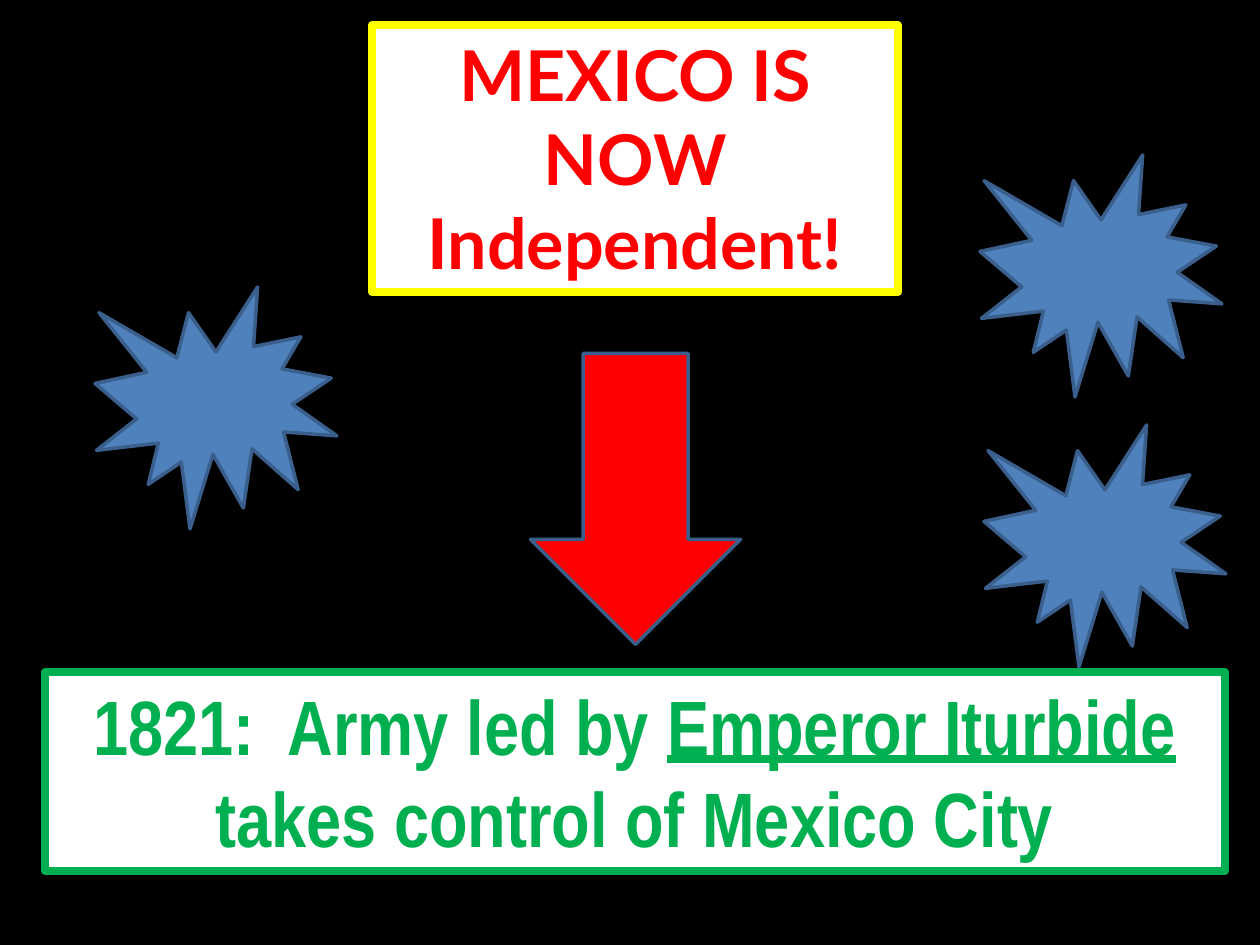
from pptx import Presentation
from pptx.dml.color import RGBColor
from pptx.enum.shapes import MSO_SHAPE
from pptx.enum.text import MSO_AUTO_SIZE, PP_ALIGN
from pptx.util import Emu, Pt

EMU_PER_PX = 914400 / 126
COLORS = {
    "background": "000000",
    "panel": "FFFFFF",
    "title_border": "FFFF00",
    "red": "FF0000",
    "green": "00B050",
    "burst": "4F81BD",
    "outline": "3A5F8C",
}
BURST_SIZE = 242
BURST_POSITIONS = [(980, 155), (95, 287), (984, 425)]


def px(length):
    return Emu(round(length * EMU_PER_PX))


def color(name):
    return RGBColor.from_string(COLORS[name])


def paint(shape, fill, line, line_width):
    shape.fill.solid()
    shape.fill.fore_color.rgb = color(fill)
    shape.line.color.rgb = color(line)
    shape.line.width = Pt(line_width)


def add_panel(slide, box, border, runs, font_name, size, text_color):
    """Add a bordered text box; runs are (text, underlined) pairs."""
    panel = slide.shapes.add_textbox(*map(px, box))
    paint(panel, "panel", border, 4.5)
    frame = panel.text_frame
    frame.word_wrap = True
    frame.auto_size = MSO_AUTO_SIZE.SHAPE_TO_FIT_TEXT
    paragraph = frame.paragraphs[0]
    paragraph.alignment = PP_ALIGN.CENTER
    paragraph.font.name = font_name
    paragraph.font.size = Pt(size)
    paragraph.font.bold = True
    paragraph.font.color.rgb = color(text_color)
    for text, underlined in runs:
        run = paragraph.add_run()
        run.text = text
        if underlined:
            run.font.underline = True


def add_figure(slide, kind, box, fill, rotation=0):
    figure = slide.shapes.add_shape(kind, *map(px, box))
    figure.shadow.inherit = False
    figure.rotation = rotation
    paint(figure, fill, "outline", 2)


def main():
    presentation = Presentation()
    presentation.slide_width = px(1260)
    presentation.slide_height = px(945)
    slide = presentation.slides.add_slide(presentation.slide_layouts[6])
    slide.background.fill.solid()
    slide.background.fill.fore_color.rgb = color("background")

    add_panel(slide, (372, 25, 526, 267), "title_border",
              [("MEXICO IS NOW Independent!", False)], "Lato", 40, "red")
    add_figure(slide, MSO_SHAPE.RIGHT_ARROW, (490, 394, 291, 210), "red", rotation=90)
    add_panel(slide, (45, 672, 1180, 199), "green",
              [("1821:  Army led by ", False),
               ("Emperor Iturbide", True),
               (" takes control of Mexico City", False)],
              "Arial Narrow", 44, "green")
    for left, top in BURST_POSITIONS:
        add_figure(slide, MSO_SHAPE.EXPLOSION1,
                   (left, top, BURST_SIZE, BURST_SIZE), "burst")

    presentation.save("out.pptx")


if __name__ == "__main__":
    main()
